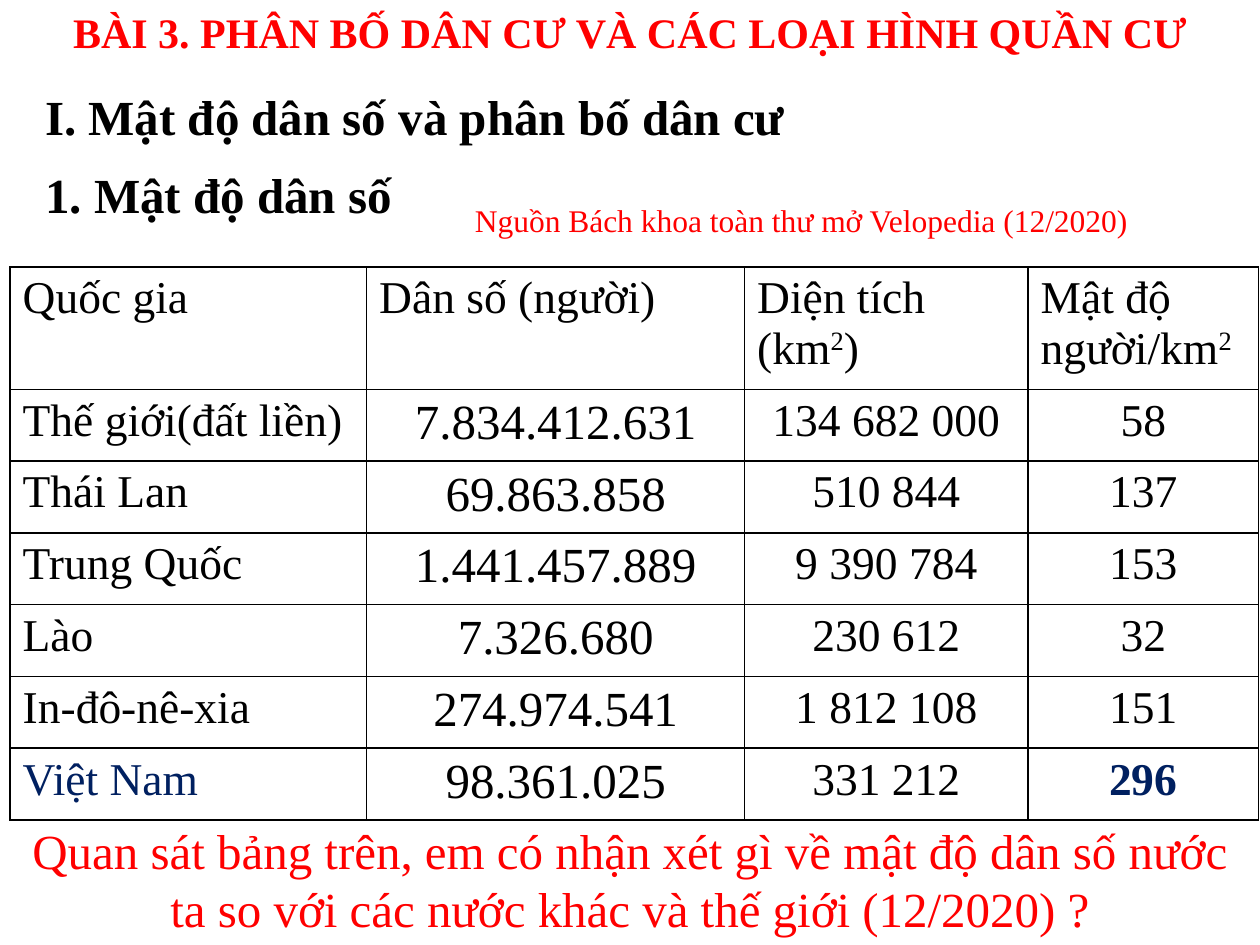
"""Build a lesson slide comparing population density by country."""
from lxml.etree import SubElement
from pptx import Presentation
from pptx.dml.color import RGBColor as RGB
from pptx.enum.text import MSO_ANCHOR as ANCHOR, MSO_AUTO_SIZE as AUTO, PP_ALIGN as AL
from pptx.oxml.ns import qn
from pptx.util import Inches, Pt

COLORS = {"red": "FF0000", "black": "000000", "navy": "002060"}
HEADER = ["Quốc gia", "Dân số (người)", "Diện tích (km^2^)", "Mật độ người/km^2"]
COUNTRIES = [
    ["Thế giới(đất liền)", "7.834.412.631", "134 682 000", "58"],
    ["Thái Lan", "69.863.858", "510 844", "137"],
    ["Trung Quốc", "1.441.457.889", "9 390 784", "153"],
    ["Lào", "7.326.680", "230 612", "32"],
    ["In-đô-nê-xia", "274.974.541", "1 812 108", "151"],
    ["Việt Nam", "98.361.025", "331 212", "296"],
]


class LessonSlide:
    def __init__(self, prs, font="Times New Roman"):
        self.font = font
        self.slide = prs.slides.add_slide(prs.slide_layouts[5])

    def style(self, p, size, color, bold=False, align=AL.LEFT):
        p.alignment = align
        for r in p.runs:
            r.font.name, r.font.size, r.font.bold = self.font, Pt(size), bold
            r.font.color.rgb = RGB.from_string(COLORS[color])

    def title(self, text, box, size, color):
        sp = self.slide.shapes.title
        sp.left, sp.top, sp.width, sp.height = map(Inches, box)
        tf = sp.text_frame
        tf.text = text
        tf.auto_size, tf.vertical_anchor = AUTO.NONE, ANCHOR.TOP
        self.style(tf.paragraphs[0], size, color, True, AL.CENTER)

    def text(self, text, box, size, color, bold=False, align=AL.LEFT, wrap=True, spacing=1.0):
        tf = self.slide.shapes.add_textbox(*map(Inches, box)).text_frame
        tf.text = text
        tf.word_wrap, tf.auto_size = wrap, AUTO.SHAPE_TO_FIT_TEXT
        p = tf.paragraphs[0]
        p.line_spacing = spacing
        self.style(p, size, color, bold, align)
        return p

    def heading(self, text, box, hanging=0):
        p = self.text(text, box, 28, "black", bold=True, wrap=False, spacing=1.5)
        if hanging:
            pPr = p._p.get_or_add_pPr()
            pPr.set("marL", str(Inches(hanging)))
            pPr.set("indent", str(-Inches(hanging)))

    def cell(self, cell, text, size, color, bold, align):
        p = cell.text_frame.paragraphs[0]
        for i, part in enumerate(text.split("^")):
            r = p.add_run()
            r.text = part
            if i % 2:
                r._r.get_or_add_rPr().set("baseline", "30000")
        self.style(p, size, color, bold, align)
        tcPr = cell._tc.get_or_add_tcPr()
        for side in ("a:lnL", "a:lnR", "a:lnT", "a:lnB"):
            ln = SubElement(tcPr, qn(side), w=str(Pt(1)))
            SubElement(SubElement(ln, qn("a:solidFill")), qn("a:srgbClr"), val=COLORS["black"])
        cell.fill.background()

    def table(self, rows, box, widths, heights):
        table = self.slide.shapes.add_table(len(rows), len(widths), *map(Inches, box)).table
        table.first_row = table.horz_banding = False
        for col, width in zip(table.columns, widths):
            col.width = Inches(width)
        for row, height in zip(table.rows, heights):
            row.height = Inches(height)
        last = len(rows) - 1
        for i, row in enumerate(rows):
            for j, text in enumerate(row):
                size = 28 if i and j == 1 else 26
                color = "navy" if i == last and j in (0, 3) else "black"
                bold = i == last and j == 3
                align = AL.CENTER if i and j else AL.LEFT
                self.cell(table.cell(i, j), text, size, color, bold, align)


def main():
    prs = Presentation()
    prs.slide_width, prs.slide_height = Inches(10), Inches(7.5)
    s = LessonSlide(prs)
    s.title("BÀI 3. PHÂN BỐ DÂN CƯ VÀ CÁC LOẠI HÌNH QUẦN CƯ", (0.46, 0, 9.08, 0.5), 24, "red")
    s.heading("I. Mật độ dân số và phân bố dân cư", (0.26, 0.4, 6.14, 0.72))
    s.heading("1. Mật độ dân số", (0.26, 1.02, 2.99, 0.72), hanging=0.62)
    s.text("Nguồn Bách khoa toàn thư mở Velopedia (12/2020)", (3.67, 1.55, 5.88, 0.4), 18, "red")
    s.table([HEADER] + COUNTRIES, (0.08, 2.12, 9.92, 4.37),
            [2.83, 3, 2.25, 1.83], [0.97] + [0.57] * len(COUNTRIES))
    s.text("Quan sát bảng trên, em có nhận xét gì về mật độ dân số nước ta "
           "so với các nước khác và thế giới (12/2020) ?",
           (0, 6.46, 10, 1.04), 28, "red", align=AL.CENTER)
    prs.save("out.pptx")


if __name__ == "__main__":
    main()
